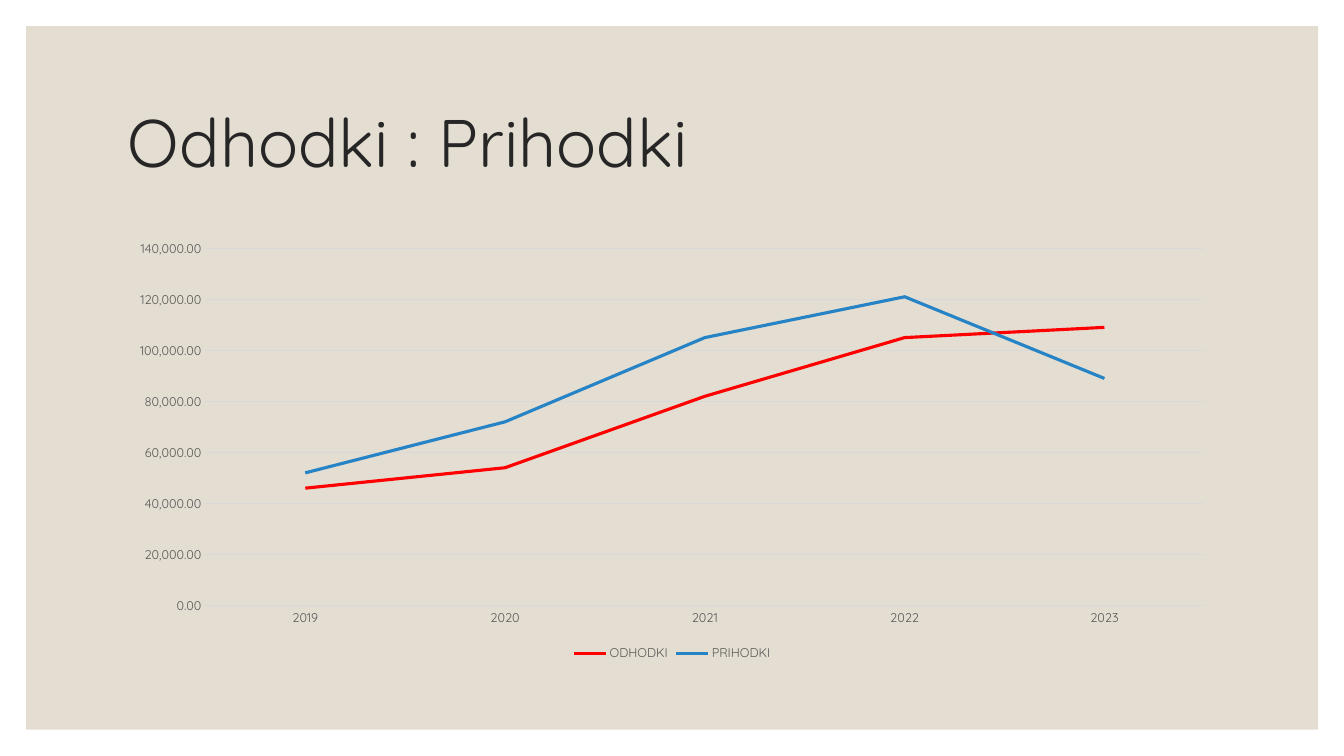
from pptx import Presentation
from pptx.chart.data import CategoryChartData
from pptx.dml.color import RGBColor
from pptx.enum.chart import XL_CHART_TYPE, XL_LEGEND_POSITION, XL_MARKER_STYLE, XL_TICK_MARK
from pptx.enum.shapes import MSO_SHAPE
from pptx.enum.text import MSO_ANCHOR, MSO_AUTO_SIZE, PP_ALIGN
from pptx.util import Cm, Pt

LINE_CHART = XL_CHART_TYPE.LINE
LEGEND_BOTTOM = XL_LEGEND_POSITION.BOTTOM
NO_MARKER = XL_MARKER_STYLE.NONE
NO_TICK = XL_TICK_MARK.NONE
RECTANGLE = MSO_SHAPE.RECTANGLE
MIDDLE = MSO_ANCHOR.MIDDLE
NO_AUTOFIT = MSO_AUTO_SIZE.NONE
LEFT = PP_ALIGN.LEFT

FONT = "Quicksand"
SAND = RGBColor(0xE3, 0xDE, 0xD1)
INK = RGBColor(0x26, 0x26, 0x26)
LABEL_GREY = RGBColor(0x59, 0x59, 0x59)
GRID_GREY = RGBColor(0xD9, 0xD9, 0xD9)
RED = RGBColor(0xFF, 0x00, 0x00)
BLUE = RGBColor(0x26, 0x83, 0xC6)

YEARS = ["2019", "2020", "2021", "2022", "2023"]
SERIES = [
    ("ODHODKI", [46000, 54000, 82000, 105000, 109000], RED),
    ("PRIHODKI", [52000, 72000, 105000, 121000, 89000], BLUE),
]
CONTENT_LEFT, CONTENT_WIDTH = Cm(2.97), Cm(27.94)


def style_font(font, size, color):
    font.name = FONT
    font.size = Pt(size)
    font.color.rgb = color


deck = Presentation()
deck.slide_width, deck.slide_height = Cm(33.87), Cm(19.05)
page = deck.slides.add_slide(deck.slide_layouts.get_by_name("Title Only"))

# Sand panel, placed behind the title
panel = page.shapes.add_shape(RECTANGLE, Cm(0.66), Cm(0.66), Cm(32.56), Cm(17.73))
panel.shadow.inherit = False
panel.fill.solid()
panel.fill.fore_color.rgb = SAND
panel.line.fill.background()

title = page.shapes.title
title.element.addprevious(panel.element)
title.left, title.top = CONTENT_LEFT, Cm(1.78)
title.width, title.height = CONTENT_WIDTH, Cm(3.81)
title_frame = title.text_frame
title_frame.text = "Odhodki : Prihodki"
title_frame.word_wrap = True
title_frame.auto_size = NO_AUTOFIT
title_frame.vertical_anchor = MIDDLE
para = title_frame.paragraphs[0]
para.alignment = LEFT
para.line_spacing = 0.9
style_font(para.runs[0].font, 48, INK)

# Expenses and income by year
chart_data = CategoryChartData(number_format="#,##0.00")
chart_data.categories = YEARS
for name, values, _ in SERIES:
    chart_data.add_series(name, values)
chart = page.shapes.add_chart(
    LINE_CHART, CONTENT_LEFT, Cm(5.84), CONTENT_WIDTH, Cm(10.92), chart_data
).chart
chart.has_title = False
style_font(chart.font, 9, LABEL_GREY)

chart.has_legend = True
chart.legend.position = LEGEND_BOTTOM
chart.legend.include_in_layout = False
style_font(chart.legend.font, 9, LABEL_GREY)

year_axis, amount_axis = chart.category_axis, chart.value_axis
for axis in (year_axis, amount_axis):
    axis.major_tick_mark = NO_TICK
    axis.minor_tick_mark = NO_TICK
    style_font(axis.tick_labels.font, 9, LABEL_GREY)

amount_axis.minimum_scale = 0
amount_axis.maximum_scale = 140000
amount_axis.major_unit = 20000
amount_axis.has_major_gridlines = True
amount_axis.format.line.fill.background()
amount_axis.tick_labels.number_format = "#,##0.00"
amount_axis.tick_labels.number_format_is_linked = False

for line in (year_axis.format.line, amount_axis.major_gridlines.format.line):
    line.color.rgb = GRID_GREY
    line.width = Pt(0.75)

plot = chart.plots[0]
plot.vary_by_categories = False
for series, (_, _, color) in zip(plot.series, SERIES):
    series.smooth = False
    series.marker.style = NO_MARKER
    series.format.line.color.rgb = color
    series.format.line.width = Pt(2.25)

deck.save("out.pptx")
